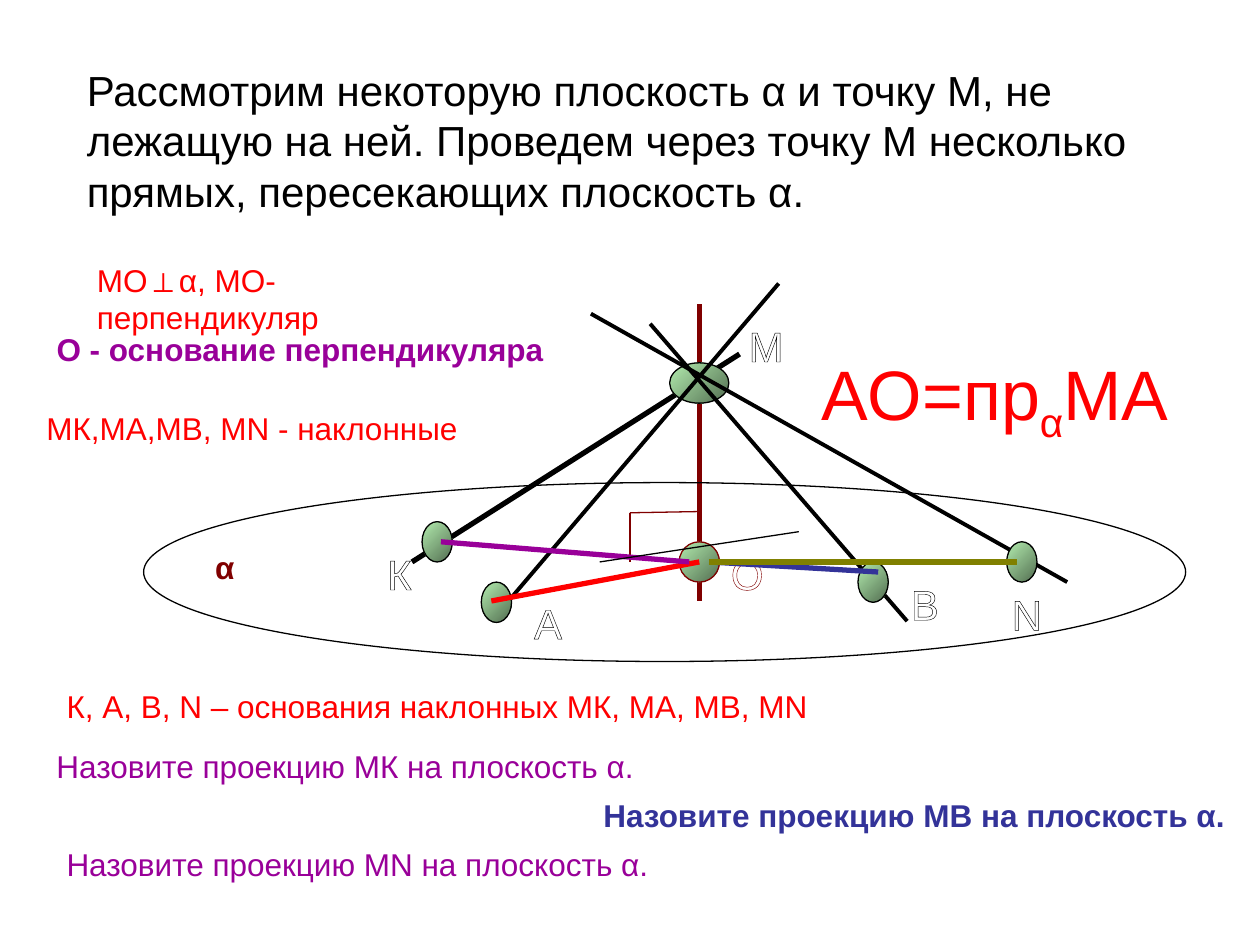
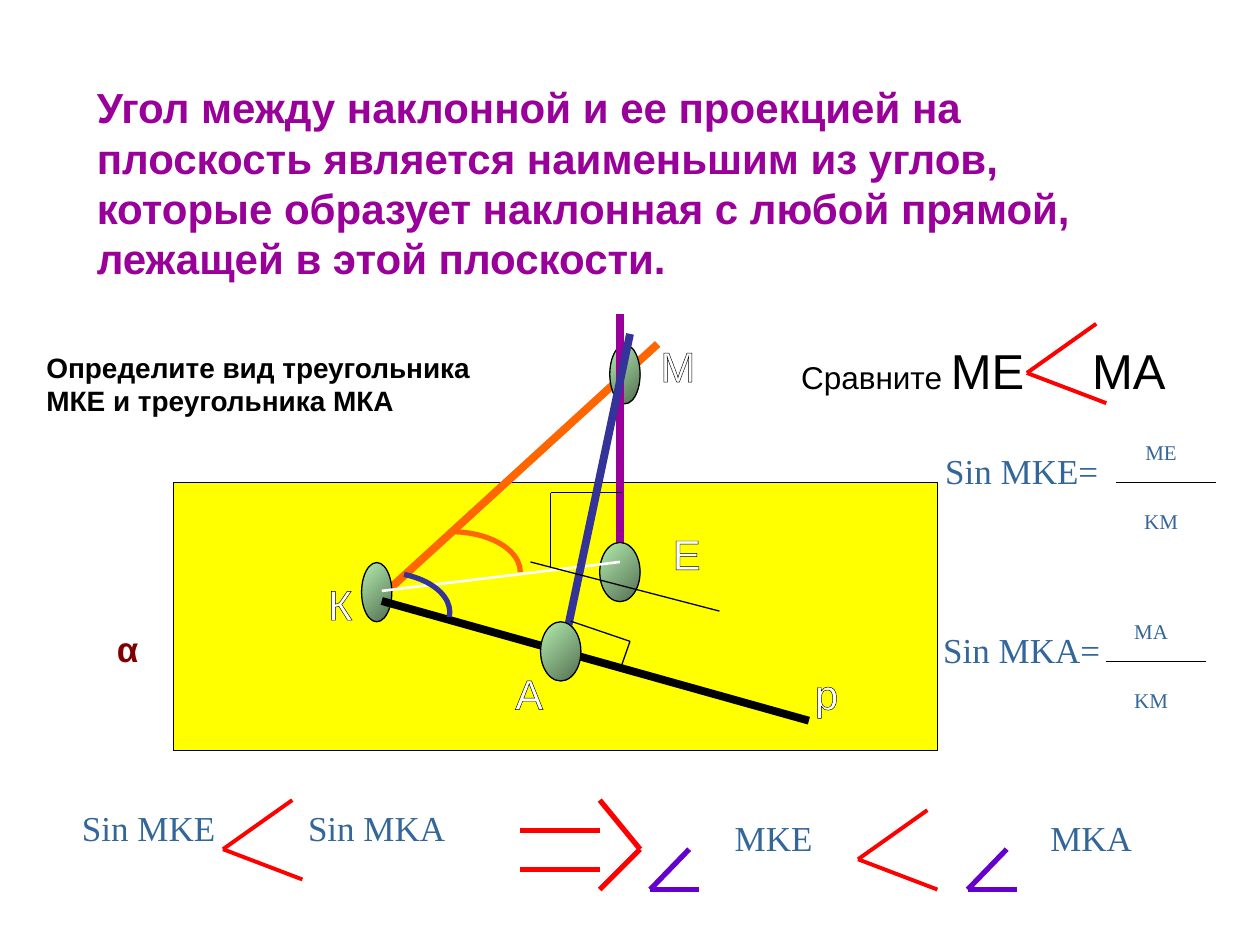
from dataclasses import dataclass
from itertools import pairwise
from typing import Any

from lxml.etree import SubElement
from pptx import Presentation
from pptx.dml.color import RGBColor
from pptx.enum.shapes import MSO_CONNECTOR as Connector, MSO_SHAPE as Shape
from pptx.enum.text import MSO_ANCHOR as Anchor, PP_ALIGN as Align
from pptx.oxml.ns import qn
from pptx.util import Inches, Pt

BLACK, WHITE, RED, MAROON = "000000", "FFFFFF", "FF0000", "800000"
PURPLE, INDIGO, VIOLET, OLIVE = "990099", "333399", "6600CC", "808000"
ORANGE, YELLOW, STEEL = "FF6600", "FFFF00", "336699"
DOT_LIGHT, DOT_DARK = "B4EEB0", "536E51"
SERIF = "Times New Roman"


def rgb(value):
    """Turn a hex string into a colour."""
    return RGBColor.from_string(value)


def outline_text(span, color):
    """Draw a thin outline around the letters of a span."""
    line = span.font._element.makeelement(qn("a:ln"), {"w": str(Pt(0.75))})
    fill = SubElement(line, qn("a:solidFill"))
    SubElement(fill, qn("a:srgbClr"), val=color)
    span.font._element.insert(0, line)


def add_tab(para, position):
    """Give a paragraph one left tab stop."""
    tabs = SubElement(para._p.get_or_add_pPr(), qn("a:tabLst"))
    SubElement(tabs, qn("a:tab"), pos=str(Inches(position)), algn="l")


@dataclass
class Area:
    """A region of a page whose parts are placed from its top left corner."""

    page: Any
    left: float = 0
    top: float = 0

    def inner(self, left, top):
        """Return a smaller region inside this one."""
        return Area(self.page, self.left + left, self.top + top)

    def spot(self, x, y):
        """Return the page position of a point in the region."""
        return Inches(self.left + x), Inches(self.top + y)

    def text(self, content, x, y, width, height=0.4, *, size=18, color=BLACK,
             font="Arial", bold=False, wrap=False, align=Align.LEFT,
             anchor=Anchor.TOP, outline=None, tab=None, inset=0.1):
        """Add a text box holding a string or a list of (string, size, baseline)."""
        box = self.page.shapes.add_textbox(
            *self.spot(x, y), Inches(width), Inches(height))
        frame = box.text_frame
        frame.word_wrap, frame.vertical_anchor = wrap, anchor
        frame.margin_left = frame.margin_right = Inches(inset)
        para = frame.paragraphs[0]
        para.alignment = align
        if tab:
            add_tab(para, tab)
        parts = [(content, size, 0)] if isinstance(content, str) else content
        for words, points, baseline in parts:
            span = para.add_run()
            span.text = words
            span.font.name, span.font.size = font, Pt(points)
            span.font.bold = bold
            span.font.color.rgb = rgb(color)
            if baseline:
                span.font._element.set("baseline", str(baseline * 1000))
            if outline:
                outline_text(span, outline)

    def label(self, letter, x, y, outline=BLACK):
        """Name a point with an outlined letter."""
        self.text(letter, x, y, 0.28, 0.38, size=24, color=WHITE,
                  align=Align.CENTER, outline=outline, inset=0)

    def formula(self, words, x, y, width=1.3, height=0.71, size=20):
        """Add a centred piece of a formula."""
        self.text(words, x, y, width, height, size=size, color=STEEL,
                  font=SERIF, align=Align.CENTER, inset=0)

    def lines(self, *points, color=BLACK, weight=0.75):
        """Join the points in turn with straight lines."""
        for start, end in pairwise(points):
            line = self.page.shapes.add_connector(
                Connector.STRAIGHT, *self.spot(*start), *self.spot(*end))
            line.line.color.rgb, line.line.width = rgb(color), Pt(weight)
            SubElement(line._element.spPr, qn("a:effectLst"))

    def shape(self, kind, x, y, width, height, fill=None, color=BLACK, weight=0.75):
        """Add a preset shape with a plain fill or none."""
        shape = self.page.shapes.add_shape(
            kind, *self.spot(x, y), Inches(width), Inches(height))
        shape.shadow.inherit = False
        shape.line.color.rgb, shape.line.width = rgb(color), Pt(weight)
        if fill:
            shape.fill.solid()
            shape.fill.fore_color.rgb = rgb(fill)
        else:
            shape.fill.background()
        return shape

    def dot(self, x, y, width=0.24, height=0.32, color=BLACK):
        """Mark a point with a shaded ellipse centred on it."""
        fill = self.shape(Shape.OVAL, x - width / 2, y - height / 2,
                          width, height, color=color).fill
        fill.gradient()
        fill.gradient_angle = 315
        for stop, shade, place in zip(fill.gradient_stops, (DOT_LIGHT, DOT_DARK), (0, 1)):
            stop.color.rgb, stop.position = rgb(shade), place

    def arc(self, x, y, color, start=270, end=0):
        """Mark an angle with an arc centred on its vertex."""
        arc = self.shape(Shape.ARC, x - 0.55, y - 0.32, 1.1, 0.64,
                         color=color, weight=3)
        arc.adjustments[0], arc.adjustments[1] = start * 0.6, end * 0.6


def perpendicular_diagram(area):
    """Draw point M, its perpendicular and four obliques to the plane."""
    foot = (4.41, 2.21)
    area.lines((4.73, 0.56), (2.13, 2.21), weight=3)
    area.dot(2.33, 2.05)
    area.label("К", 1.89, 2.05)
    area.label("О", 4.65, 2.05, MAROON)
    area.lines((4.41, 2.52), (4.41, 0.16), color=MAROON, weight=3)
    area.dot(*foot, width=0.32, color=MAROON)
    area.lines((4.41, 1.81), (3.86, 1.82), (3.86, 2.21), color=MAROON)
    area.dot(4.41, 0.79, width=0.47)
    area.label("М", 4.8, 0.24)
    area.shape(Shape.OVAL, 0, 1.58, 8.27, 1.42)
    for start, end in (((3.55, 0.24), (7.33, 2.37)),
                       ((4.02, 0.32), (6.06, 2.68)),
                       ((5.04, 0), (2.76, 2.68))):
        area.lines(start, end, weight=2.25)
    for base in ((5.79, 2.37), (2.8, 2.53), (6.97, 2.21)):
        area.dot(*base)
    for letter, x, y in (("А", 3.07, 2.44), ("В", 6.06, 2.29), ("N", 6.87, 2.37)):
        area.label(letter, x, y)
    for start, end, color in (((2.76, 2.52), foot, RED),
                              ((2.36, 2.05), (4.33, 2.21), PURPLE),
                              ((4.49, 2.21), (5.83, 2.29), INDIGO),
                              ((4.49, 2.21), (6.93, 2.21), OLIVE)):
        area.lines(start, end, color=color, weight=3)
    area.text("α", 0.47, 2.05, 0.36, color=MAROON, bold=True)
    area.lines((3.62, 2.21), (5.2, 1.97))


def angle_diagram(area):
    """Draw the oblique MK, its projection KE and the line p in the plane."""
    area.text("α", 0, 2.44, 0.36, size=20, color=MAROON, bold=True)
    area.shape(Shape.RECTANGLE, 0.55, 1.34, 6.06, 2.13, fill=YELLOW)
    area.lines((4.39, 0.24), (2.2, 2.24), color=ORANGE, weight=4.5)
    area.dot(4.13, 0.48, height=0.47)
    area.dot(2.16, 2.21, height=0.47)
    for letter, x, y in (("М", 4.41, 0.16), ("К", 1.73, 2.05), ("Е", 4.48, 1.65)):
        area.label(letter, x, y)
    area.lines((4.09, 2.25), (4.09, 0), color=PURPLE, weight=4.5)
    area.dot(4.09, 2.05, 0.32, 0.47)
    area.lines((4.11, 1.42), (3.54, 1.42), (3.54, 2.01))
    area.lines((2.2, 2.2), (4.09, 1.97), color=WHITE, weight=1.5)
    area.lines((2.2, 2.28), (5.59, 3.23), weight=4.5)
    area.lines((4.17, 0.16), (3.62, 2.76), color=INDIGO, weight=4.5)
    area.lines((3.7, 2.44), (4.17, 2.6), (4.09, 2.83))
    area.label("А", 3.23, 2.76)
    area.dot(3.62, 2.68, 0.32, 0.47)
    area.label("р", 5.59, 2.76)
    area.arc(2.75, 2.05, ORANGE)
    area.arc(2.19, 2.37, INDIGO, 302, 4)
    area.lines((3.38, 1.97), (4.88, 2.36))


def sine_ratio(area, name, upper, lower, bar):
    """Write a sine as a fraction with its bar at the given offset."""
    area.formula(name, 0, 0.08)
    area.lines((bar, 0.39), (bar + 0.79, 0.39))
    area.formula(upper, bar + 0.16, 0, 0.39, 0.31, 12)
    area.formula(lower, bar + 0.16, 0.55, 0.39, 0.47, 12)


def less_sign(area):
    """Draw a less-than sign."""
    area.lines((0.63, 0.63), (0, 0.39), (0.55, 0), color=RED, weight=2.25)


def implies_sign(area):
    """Draw a double arrow for a conclusion."""
    for y in (0.24, 0.55):
        area.lines((0, y), (0.63, y), color=RED, weight=3)
    area.lines((0.63, 0), (0.95, 0.39), (0.63, 0.71), color=RED, weight=3)


def named_angle(area, name):
    """Draw an angle sign followed by the name of the angle."""
    area.formula(name, 0.47, 0, 1.02)
    area.lines((0.39, 0.63), (0, 0.63), (0.31, 0.31), color=VIOLET, weight=3)


def conclusion(area):
    """Compare the sines and then the angles."""
    area.formula("Sin MKE", 0, 0)
    area.formula("Sin MKA", 1.81, 0)
    less_sign(area.inner(1.24, 0))
    implies_sign(area.inner(3.6, 0))
    named_angle(area.inner(4.63, 0.08), "MKE")
    less_sign(area.inner(6.28, 0.08))
    named_angle(area.inner(7.15, 0.08), "MKA")


def obliques_slide(area):
    """Build the slide on the perpendicular and the obliques."""
    area.text("Рассмотрим некоторую плоскость α и точку М, не лежащую на ней. "
              "Проведем через точку М несколько прямых, пересекающих плоскость α.",
              0.59, 0.46, 8.98, 1.3, size=24, wrap=True, anchor=Anchor.MIDDLE)
    area.text("МО⊥α, МО-перпендикуляр", 0.67, 2.02, 3.32, color=RED, wrap=True)
    area.text("О - основание перпендикуляра", 0.35, 2.57, 4.08,
              color=PURPLE, bold=True)
    perpendicular_diagram(area.inner(1.14, 2.25))
    area.text("МК,МА,МВ, МN - наклонные", 0.27, 3.2, 4.02, color=RED, wrap=True)
    area.text("К, А, В, N – основания наклонных МК, МА, МВ, МN",
              0.43, 5.4, 6.09, color=RED)
    area.text([("AO=пр", 40, 0), ("α", 40, -25), ("МА", 40, 0)],
              6.42, 2.73, 3.39, 0.77, color=RED, wrap=True)
    for oblique, x, y, width, color, bold in (
            ("МК", 0.35, 5.88, 4.8, PURPLE, False),
            ("МВ", 4.69, 6.27, 5.16, INDIGO, True),
            ("МN", 0.43, 6.66, 4.84, PURPLE, False)):
        area.text(f"Назовите проекцию {oblique} на плоскость α.",
                  x, y, width, color=color, bold=bold)


def angle_slide(area):
    """Build the slide on the angle between an oblique and its projection."""
    area.text("Угол между наклонной и ее проекцией на плоскость является "
              "наименьшим из углов, которые образует наклонная с любой прямой, "
              "лежащей в этой плоскости.",
              0.67, 0.6, 8.5, 1.7, size=24, color=PURPLE, bold=True, wrap=True)
    angle_diagram(area.inner(0.83, 2.49))
    area.text("Определите вид треугольника МКЕ и треугольника МКА",
              0.27, 2.73, 4.02, 0.64, size=16, bold=True, wrap=True)
    sine_ratio(area.inner(7.46, 3.44), "Sin MKE=", "ME", "KM", 1.4)
    sine_ratio(area.inner(7.46, 4.86), "Sin MKA=", "MA", "KM", 1.32)
    area.text([("Сравните ", 18, 0), ("ME\tМА", 28, 0)],
              6.26, 2.65, 3.23, 0.57, wrap=True, tab=2.31)
    less_sign(area.inner(8.15, 2.57))
    conclusion(area.inner(0.53, 6.35))


def main():
    """Build the deck and save it."""
    deck = Presentation()
    deck.slide_width, deck.slide_height = Inches(10), Inches(7.5)
    for build in (obliques_slide, angle_slide):
        build(Area(deck.slides.add_slide(deck.slide_layouts[6])))
    deck.save("out.pptx")


if __name__ == "__main__":
    main()
